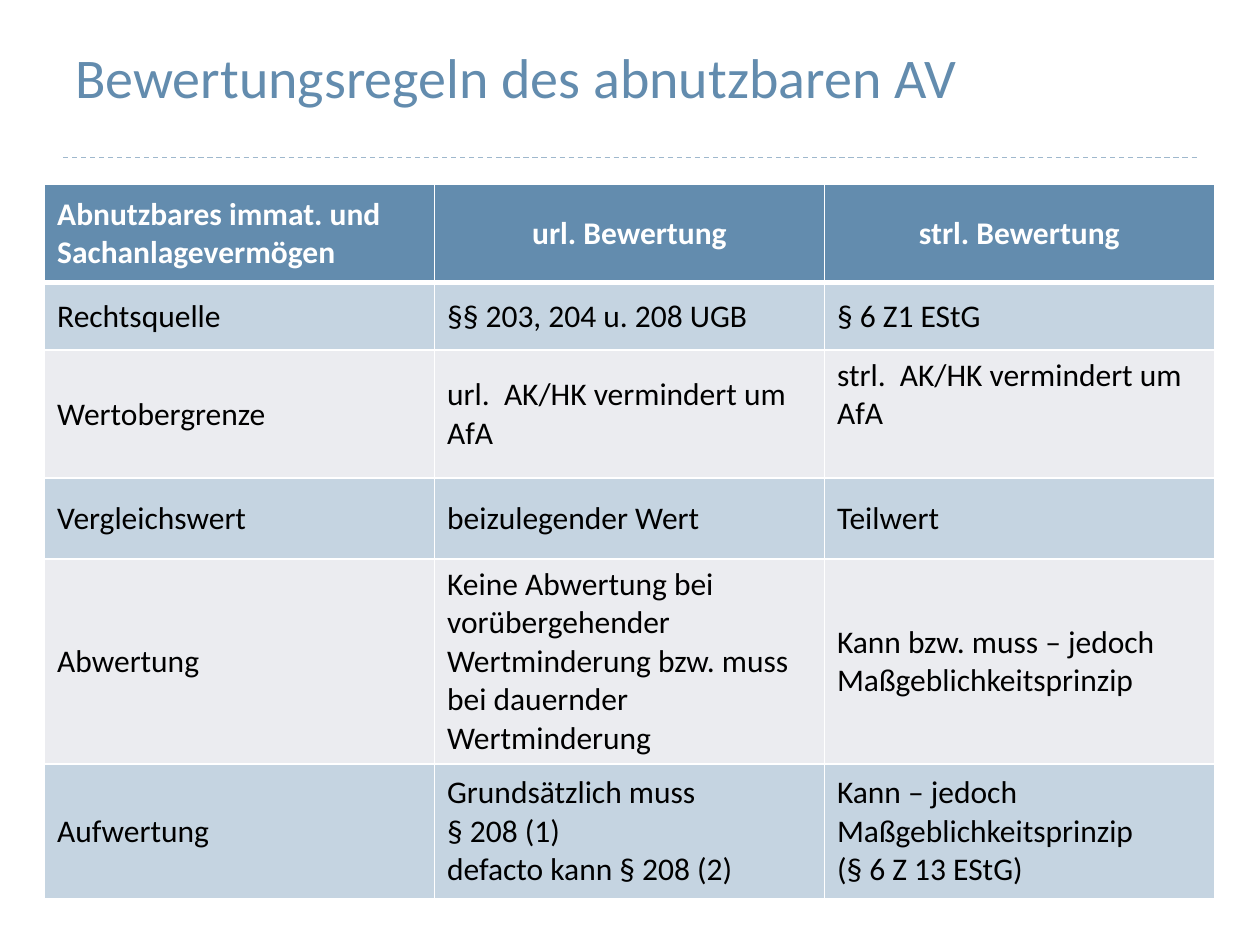
from dataclasses import dataclass

from lxml.etree import SubElement
from pptx import Presentation
from pptx.dml.color import RGBColor
from pptx.enum.dml import MSO_LINE
from pptx.enum.shapes import MSO_CONNECTOR
from pptx.enum.text import MSO_ANCHOR, PP_ALIGN
from pptx.oxml.ns import qn
from pptx.util import Cm, Pt

TITLE = "Bewertungsregeln des abnutzbaren AV"
HEADER = ["Abnutzbares immat. und Sachanlagevermögen", "url. Bewertung", "strl. Bewertung"]
BODY = [
    ["Rechtsquelle", "§§ 203, 204 u. 208 UGB", "§ 6 Z1 EStG"],
    ["Wertobergrenze", "url.  AK/HK vermindert um AfA", "strl.  AK/HK vermindert um AfA"],
    ["Vergleichswert", "beizulegender Wert", "Teilwert"],
    [
        "Abwertung",
        "Keine Abwertung bei vorübergehender Wertminderung bzw. muss bei dauernder Wertminderung",
        "Kann bzw. muss – jedoch\nMaßgeblichkeitsprinzip",
    ],
    [
        "Aufwertung",
        "Grundsätzlich muss\n§ 208 (1)\ndefacto kann § 208 (2)",
        "Kann – jedoch Maßgeblichkeitsprinzip\n(§ 6 Z 13 EStG)",
    ],
]
ROW_HEIGHTS = [1.98, 1.36, 2.58, 1.63, 4.13, 2.72]
COLUMN_WIDTH = 7.86
TOP_ANCHORED = (2, 2)


@dataclass(frozen=True)
class Theme:
    font: str = "Calibri"
    title_size: int = 32
    table_size: int = 18
    accent: str = "638CAE"
    rule: str = "9FB8CD"
    bands: tuple = ("C5D4E1", "EBECF0")
    text: str = "000000"
    white: str = "FFFFFF"
    border: float = 1
    header_border: float = 3


THEME = Theme()


def write_text(text_frame, text, size, color, bold=False, alignment=PP_ALIGN.LEFT):
    for index, line in enumerate(text.split("\n")):
        paragraph = text_frame.add_paragraph() if index else text_frame.paragraphs[0]
        paragraph.alignment = alignment
        run = paragraph.add_run()
        run.text = line
        run.font.name = THEME.font
        run.font.size = Pt(size)
        run.font.bold = bold
        run.font.color.rgb = RGBColor.from_string(color)


def add_title(slide):
    shape = slide.shapes.add_textbox(Cm(1.27), Cm(0), Cm(22.86), Cm(2.33))
    text_frame = shape.text_frame
    text_frame.word_wrap = True
    text_frame.vertical_anchor = MSO_ANCHOR.BOTTOM
    write_text(text_frame, TITLE, THEME.title_size, THEME.accent)


def add_rule(slide):
    connector = slide.shapes.add_connector(
        MSO_CONNECTOR.STRAIGHT, Cm(1.27), Cm(3.18), Cm(24.13), Cm(3.18)
    )
    connector.line.color.rgb = RGBColor.from_string(THEME.rule)
    connector.line.width = Pt(0.75)
    connector.line.dash_style = MSO_LINE.DASH
    SubElement(connector._element.spPr, qn("a:effectLst"))


def set_borders(cell, row):
    widths = {
        "a:lnL": THEME.border,
        "a:lnR": THEME.border,
        "a:lnT": THEME.header_border if row == 1 else THEME.border,
        "a:lnB": THEME.header_border if row == 0 else THEME.border,
    }
    properties = cell._tc.get_or_add_tcPr()
    for tag, width in widths.items():
        line = SubElement(properties, qn(tag), w=str(Pt(width)))
        fill = SubElement(line, qn("a:solidFill"))
        SubElement(fill, qn("a:srgbClr"), val=THEME.white)


def fill_cell(cell, text, row, column):
    is_header = row == 0
    set_borders(cell, row)
    cell.fill.solid()
    background = THEME.accent if is_header else THEME.bands[(row - 1) % 2]
    cell.fill.fore_color.rgb = RGBColor.from_string(background)
    top = (row, column) == TOP_ANCHORED
    cell.vertical_anchor = MSO_ANCHOR.TOP if top else MSO_ANCHOR.MIDDLE
    write_text(
        cell.text_frame,
        text,
        THEME.table_size,
        THEME.white if is_header else THEME.text,
        is_header,
        PP_ALIGN.CENTER if is_header and column else PP_ALIGN.LEFT,
    )


def add_rules_table(slide):
    rows = [HEADER] + BODY
    shape = slide.shapes.add_table(
        len(rows), len(HEADER), Cm(0.9), Cm(3.72),
        Cm(COLUMN_WIDTH * len(HEADER)), Cm(sum(ROW_HEIGHTS)),
    )
    table = shape.table
    for column in table.columns:
        column.width = Cm(COLUMN_WIDTH)
    for row, (texts, height) in enumerate(zip(rows, ROW_HEIGHTS)):
        table.rows[row].height = Cm(height)
        for column, text in enumerate(texts):
            fill_cell(table.cell(row, column), text, row, column)


def main():
    presentation = Presentation()
    presentation.slide_width = Cm(25.4)
    presentation.slide_height = Cm(19.05)
    slide = presentation.slides.add_slide(presentation.slide_layouts[6])
    add_rule(slide)
    add_title(slide)
    add_rules_table(slide)
    presentation.save("out.pptx")


if __name__ == "__main__":
    main()
